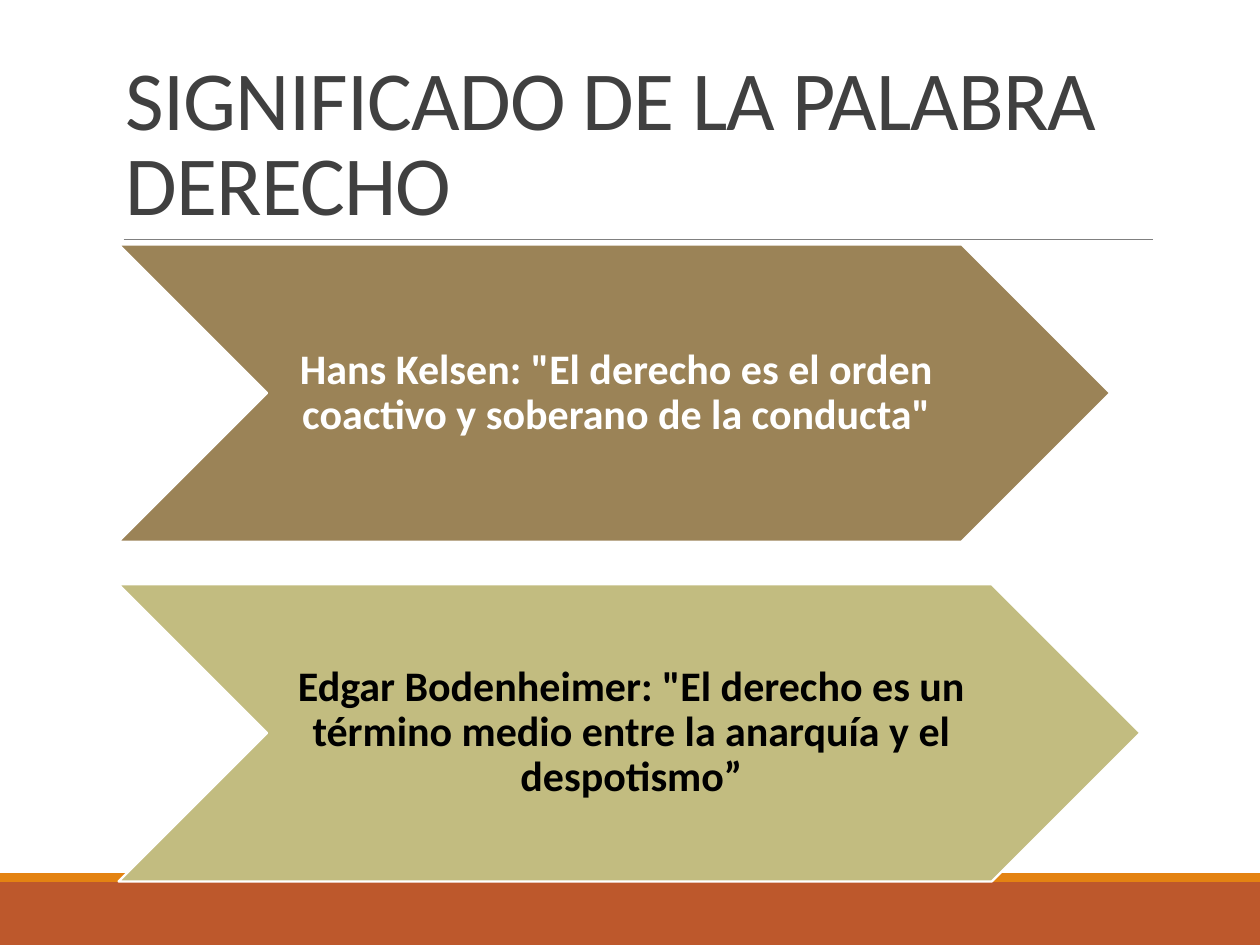
from dataclasses import dataclass

from lxml import etree
from pptx import Presentation
from pptx.dml.color import RGBColor
from pptx.enum.shapes import MSO_CONNECTOR, MSO_SHAPE
from pptx.enum.text import MSO_ANCHOR, PP_ALIGN
from pptx.oxml.ns import qn
from pptx.util import Cm, Pt

RECTANGLE, CHEVRON = MSO_SHAPE.RECTANGLE, MSO_SHAPE.CHEVRON
STRAIGHT = MSO_CONNECTOR.STRAIGHT
BOTTOM, MIDDLE = MSO_ANCHOR.BOTTOM, MSO_ANCHOR.MIDDLE
LEFT, CENTER = PP_ALIGN.LEFT, PP_ALIGN.CENTER

WHITE = RGBColor(0xFF, 0xFF, 0xFF)
BLACK = RGBColor(0x00, 0x00, 0x00)
CHARCOAL = RGBColor(0x40, 0x40, 0x40)
GRAY = RGBColor(0x80, 0x80, 0x80)
RUST = RGBColor(0xBD, 0x58, 0x2C)
ORANGE = RGBColor(0xE4, 0x83, 0x12)
BROWN = RGBColor(0x9B, 0x83, 0x57)
OLIVE = RGBColor(0xC2, 0xBC, 0x80)

CHEVRON_LEFT, CHEVRON_TOP, CHEVRON_HEIGHT, CHEVRON_STEP = 2.39, 4.93, 5.99, 6.85
QUOTES = [
    ('Hans Kelsen: "El derecho es el orden coactivo y soberano de la conducta"',
     19.99, BROWN, WHITE),
    ('Edgar Bodenheimer: "El derecho es un término medio entre la anarquía y el despotismo”',
     20.6, OLIVE, BLACK),
]


@dataclass
class SlideBuilder:
    """Draws styled elements on the current slide."""

    page: object
    font: str = "Calibri"

    def shape(self, kind, left, top, width, height, fill, outline=None):
        shape = self.page.shapes.add_shape(kind, Cm(left), Cm(top), Cm(width), Cm(height))
        shape.shadow.inherit = False
        shape.fill.solid()
        shape.fill.fore_color.rgb = fill
        if outline is None:
            shape.line.fill.background()
        else:
            shape.line.color.rgb = outline
            shape.line.width = Pt(1.25)

    def rule(self, left, right, top):
        line = self.page.shapes.add_connector(STRAIGHT, Cm(left), Cm(top), Cm(right), Cm(top))
        line.line.color.rgb = GRAY
        line.line.width = Pt(0.5)
        etree.SubElement(line._element.spPr, qn("a:effectLst"))

    def text(self, words, left, top, width, height, size, color, margins,
             anchor=MIDDLE, align=CENTER, leading=0.9, bold=False, tracking=0):
        box = self.page.shapes.add_textbox(Cm(left), Cm(top), Cm(width), Cm(height))
        frame = box.text_frame
        frame.word_wrap = True
        frame.vertical_anchor = anchor
        (frame.margin_left, frame.margin_top,
         frame.margin_right, frame.margin_bottom) = map(Cm, margins)
        paragraph = frame.paragraphs[0]
        paragraph.alignment = align
        paragraph.line_spacing = leading
        font = paragraph.font
        font.name, font.size, font.bold = self.font, Pt(size), bold
        font.color.rgb = color
        span = paragraph.add_run()
        span.text = words
        if tracking:
            span._r.get_or_add_rPr().set("spc", str(round(tracking * 100)))

    def quote(self, words, top, width, fill, color):
        self.shape(CHEVRON, CHEVRON_LEFT, top, width, CHEVRON_HEIGHT, fill, WHITE)
        self.text(words, CHEVRON_LEFT + CHEVRON_HEIGHT / 2, top, width - CHEVRON_HEIGHT,
                  CHEVRON_HEIGHT, 24, color, (0.08, 0.05, 0, 0.05), bold=True)


def main():
    deck = Presentation()
    deck.slide_width, deck.slide_height = Cm(25.4), Cm(19.05)
    builder = SlideBuilder(deck.slides.add_slide(deck.slide_layouts[6]))
    builder.shape(RECTANGLE, 0, 17.78, 25.4, 1.27, RUST)
    builder.shape(RECTANGLE, 0, 17.6, 25.4, 0.18, ORANGE)
    builder.rule(2.49, 23.24, 4.83)
    builder.text("SIGNIFICADO DE LA PALABRA DERECHO", 2.29, 0.79, 20.96, 4.04, 48, CHARCOAL,
                 (0.25, 0.13, 0.25, 0.13), BOTTOM, LEFT, leading=0.85, tracking=-0.5)
    for row, (words, width, fill, color) in enumerate(QUOTES):
        builder.quote(words, CHEVRON_TOP + row * CHEVRON_STEP, width, fill, color)
    deck.save("out.pptx")


if __name__ == "__main__":
    main()
